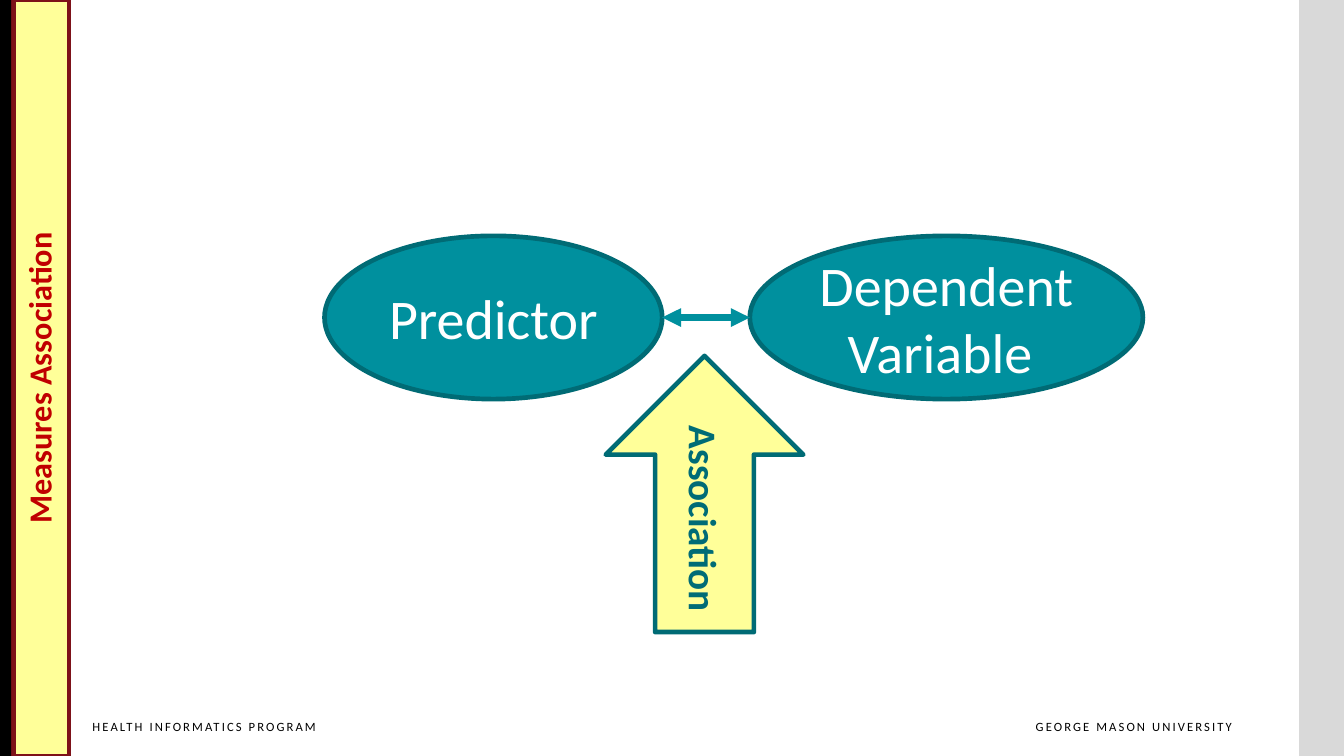
from lxml import etree
from pptx import Presentation
from pptx.dml.color import RGBColor
from pptx.enum.shapes import MSO_CONNECTOR, MSO_SHAPE
from pptx.enum.text import MSO_ANCHOR, MSO_AUTO_SIZE, PP_ALIGN
from pptx.oxml.ns import qn
from pptx.util import Pt

BLACK = RGBColor(0x00, 0x00, 0x00)
WHITE = RGBColor(0xFF, 0xFF, 0xFF)
GREY = RGBColor(0xD9, 0xD9, 0xD9)
YELLOW = RGBColor(0xFF, 0xFF, 0x99)
MAROON = RGBColor(0x7D, 0x12, 0x19)
RED = RGBColor(0xC0, 0x00, 0x00)
TEAL = RGBColor(0x00, 0x90, 0x9E)
DARK_TEAL = RGBColor(0x00, 0x6B, 0x75)
LABEL_TEAL = RGBColor(0x00, 0x6C, 0x76)

SLIDE_W, SLIDE_H = 960, 540
OUTLINE = 3.35


def paint(shape, fill, line=None):
    shape.fill.solid()
    shape.fill.fore_color.rgb = fill
    if line is None:
        shape.line.fill.background()
    else:
        shape.line.color.rgb = line
        shape.line.width = Pt(OUTLINE)


def write(shape, text, size, color, bold=False, align=PP_ALIGN.CENTER,
          anchor=MSO_ANCHOR.MIDDLE):
    frame = shape.text_frame
    frame.text = text
    frame.word_wrap = True
    frame.auto_size = MSO_AUTO_SIZE.NONE
    frame.vertical_anchor = anchor
    for paragraph in frame.paragraphs:
        paragraph.alignment = align
        for run in paragraph.runs:
            run.font.name = "Calibri"
            run.font.size = Pt(size)
            run.font.bold = bold
            run.font.color.rgb = color


def add_block(slide, kind, box, fill, line=None):
    block = slide.shapes.add_shape(kind, *map(Pt, box))
    block.shadow.inherit = False
    paint(block, fill, line)
    return block


def add_side_bars(slide):
    for left, width, color in ((SLIDE_W - 32, 32, GREY), (0, 8, BLACK)):
        add_block(slide, MSO_SHAPE.RECTANGLE, (left, 0, width, SLIDE_H), color)


def add_footer(slide, box, text, align):
    footer = slide.shapes.add_textbox(*map(Pt, box))
    write(footer, text, 9, BLACK, align=align, anchor=MSO_ANCHOR.TOP)
    footer.text_frame.margin_right = 0
    for run in footer.text_frame.paragraphs[0].runs:
        run.font.element.set("spc", "150") if hasattr(run.font, "element") \
            else run._r.get_or_add_rPr().set("spc", "150")


def place_title(slide, box, text):
    """Turn the title a quarter left so that it fills the upright box."""
    left, top, width, height = box
    title = slide.shapes.title
    title.left = Pt(left + (width - height) / 2)
    title.top = Pt(top + (height - width) / 2)
    title.width, title.height = Pt(height), Pt(width)
    title.rotation = 270
    paint(title, YELLOW, MAROON)
    write(title, text, 23, RED, bold=True)
    frame = title.text_frame
    frame.margin_left = frame.margin_right = Pt(13)
    frame.margin_top = frame.margin_bottom = Pt(13)
    frame.paragraphs[0].line_spacing = 0.9


def add_double_arrow(slide, start, end, y):
    link = slide.shapes.add_connector(
        MSO_CONNECTOR.STRAIGHT, Pt(start), Pt(y), Pt(end), Pt(y))
    link.line.color.rgb = TEAL
    link.line.width = Pt(4.5)
    for tip in ("a:headEnd", "a:tailEnd"):
        etree.SubElement(link.line._get_or_add_ln(), qn(tip), type="triangle")
    etree.SubElement(link.element.spPr, qn("a:effectLst"))


def add_association_diagram(slide, left, top):
    oval_h = 116.6
    predictor_w, gap, dependent_w = 241.2, 62.6, 280.8
    predictor_right = left + predictor_w
    dependent_left = predictor_right + gap
    ovals = ((left, predictor_w, "Predictor"),
             (dependent_left, dependent_w, "Dependent\nVariable "))
    for oval_left, width, text in ovals:
        oval = add_block(slide, MSO_SHAPE.OVAL,
                         (oval_left, top, width, oval_h), TEAL, DARK_TEAL)
        write(oval, text, 40, WHITE)
    add_double_arrow(slide, predictor_right, dependent_left, top + oval_h / 2)

    association = add_block(slide, MSO_SHAPE.UP_ARROW,
                            (left + 200.9, top + 85.7, 141.1, 197.3),
                            YELLOW, DARK_TEAL)
    write(association, "Association", 28, LABEL_TEAL, bold=True)
    association.element.txBody.bodyPr.set("vert", "vert")


def main():
    prs = Presentation()
    prs.slide_width, prs.slide_height = Pt(SLIDE_W), Pt(SLIDE_H)
    slide = prs.slides.add_slide(prs.slide_layouts[5])
    add_side_bars(slide)
    add_footer(slide, (710.6, 509.8, 169.2, 23.8),
               "GEORGE MASON UNIVERSITY", PP_ALIGN.RIGHT)
    add_footer(slide, (59, 509.8, 182.9, 23.8),
               "HEALTH INFORMATICS PROGRAM", PP_ALIGN.LEFT)
    place_title(slide, (9.7, 0, 39.6, SLIDE_H), "Measures Association")
    add_association_diagram(slide, 231.8, 168.5)
    prs.save("out.pptx")


if __name__ == "__main__":
    main()
